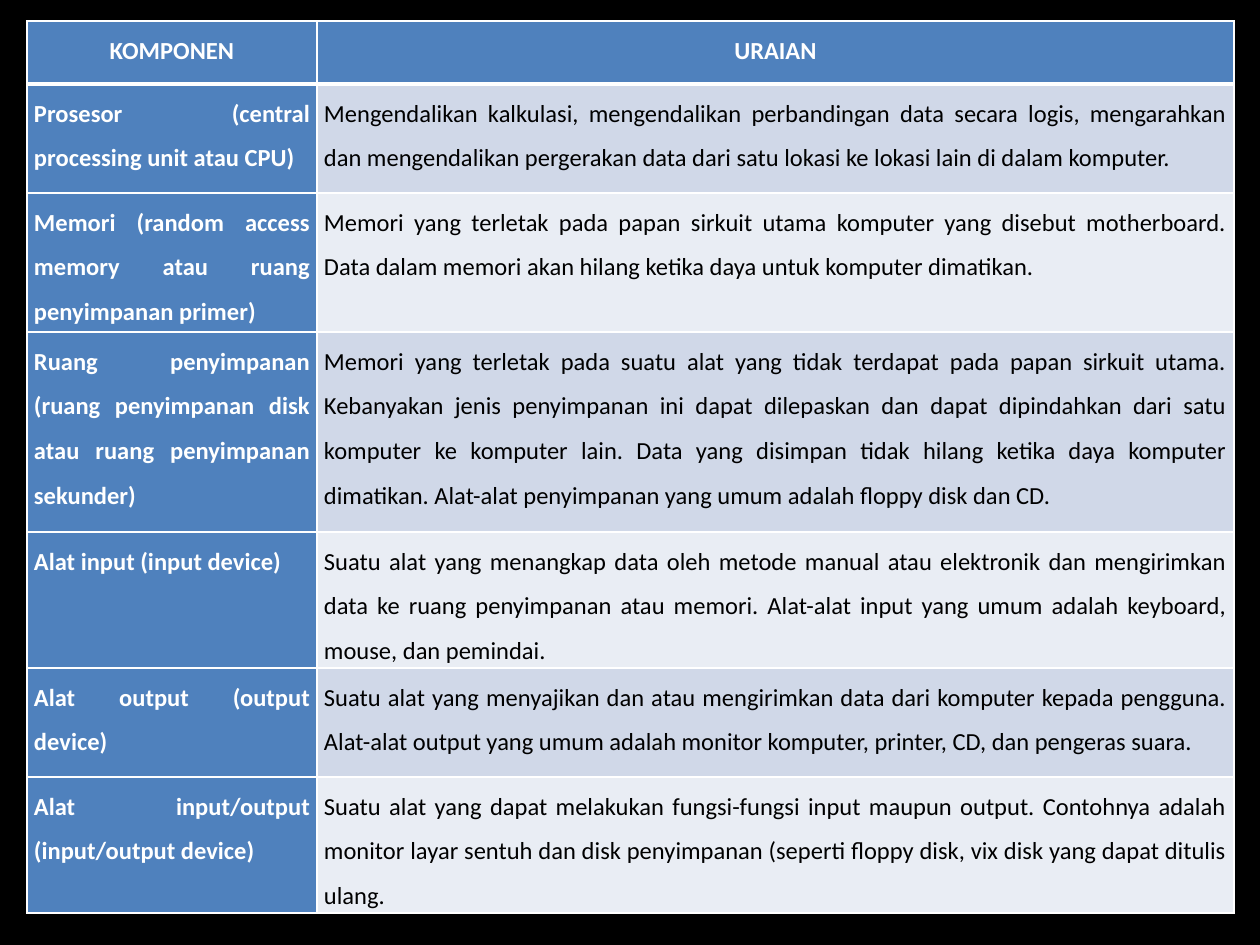
from lxml import etree
from pptx import Presentation
from pptx.dml.color import RGBColor
from pptx.enum.text import PP_ALIGN
from pptx.oxml.ns import qn
from pptx.util import Emu, Pt

CENTER, JUSTIFY = PP_ALIGN.CENTER, PP_ALIGN.JUSTIFY
COLORS = {
    "background": "000000",
    "accent": "4F81BD",
    "odd": "D0D8E8",
    "even": "E9EDF4",
    "light": "FFFFFF",
    "dark": "000000",
}
FONT, FONT_SIZE, LINE_SPACING = "Calibri", 14, 1.5
PAGE_SIZE = (1260, 945)
TABLE_LEFT, TABLE_TOP = 27, 21
COLUMN_WIDTHS = [290, 917]
ROW_HEIGHTS = [63, 109, 139, 200, 136, 109, 136]
SIDE_MARGIN = 7

ROWS = [
    ("KOMPONEN", "URAIAN"),
    ("Prosesor (central processing unit atau CPU)",
     "Mengendalikan kalkulasi, mengendalikan perbandingan data secara logis, "
     "mengarahkan dan mengendalikan pergerakan data dari satu lokasi ke lokasi "
     "lain di dalam komputer."),
    ("Memori (random access memory atau ruang penyimpanan primer)",
     "Memori yang terletak pada papan sirkuit utama komputer yang disebut "
     "motherboard. Data dalam memori akan hilang ketika daya untuk komputer "
     "dimatikan."),
    ("Ruang penyimpanan (ruang penyimpanan disk atau ruang penyimpanan sekunder)",
     "Memori yang terletak pada suatu alat yang tidak terdapat pada papan sirkuit "
     "utama. Kebanyakan jenis penyimpanan ini dapat dilepaskan dan dapat "
     "dipindahkan dari satu komputer ke komputer lain. Data yang disimpan tidak "
     "hilang ketika daya komputer dimatikan. Alat-alat penyimpanan yang umum "
     "adalah floppy disk dan CD."),
    ("Alat input (input device)",
     "Suatu alat yang menangkap data oleh metode manual atau elektronik dan "
     "mengirimkan data ke ruang penyimpanan atau memori. Alat-alat input yang "
     "umum adalah keyboard, mouse, dan pemindai."),
    ("Alat output (output device)",
     "Suatu alat yang menyajikan dan atau mengirimkan data dari komputer kepada "
     "pengguna. Alat-alat output yang umum adalah monitor komputer, printer, CD, "
     "dan pengeras suara."),
    ("Alat input/output (input/output device)",
     "Suatu alat yang dapat melakukan fungsi-fungsi input maupun output. "
     "Contohnya adalah monitor layar sentuh dan disk penyimpanan (seperti floppy "
     "disk, vix disk yang dapat ditulis ulang."),
]


def px(value):
    return Emu(round(value * 914400 / 126))


def color(name):
    return RGBColor.from_string(COLORS[name])


def add_borders(cell, widths):
    properties = cell._tc.get_or_add_tcPr()
    for side, width in widths.items():
        line = etree.SubElement(properties, qn(f"a:ln{side}"), w=str(Pt(width)))
        fill = etree.SubElement(line, qn("a:solidFill"))
        etree.SubElement(fill, qn("a:srgbClr"), val=COLORS["light"])


def fill_cell(cell, text, row, column):
    is_header = row == 0
    is_accent = is_header or column == 0
    add_borders(cell, {"L": 1, "R": 1,
                       "T": 3 if row == 1 else 1,
                       "B": 3 if is_header else 1})
    cell.fill.solid()
    band = "odd" if row % 2 else "even"
    cell.fill.fore_color.rgb = color("accent" if is_accent else band)
    cell.margin_left = cell.margin_right = px(SIDE_MARGIN)
    cell.margin_top = cell.margin_bottom = 0

    para = cell.text_frame.paragraphs[0]
    para.text = text
    para.alignment = CENTER if is_header else JUSTIFY
    para.line_spacing = LINE_SPACING
    font = para.runs[0].font
    font.name, font.size, font.bold = FONT, Pt(FONT_SIZE), is_accent
    font.color.rgb = color("light" if is_accent else "dark")


def main():
    deck = Presentation()
    deck.slide_width, deck.slide_height = map(px, PAGE_SIZE)
    page = deck.slides.add_slide(deck.slide_layouts[6])
    page.background.fill.solid()
    page.background.fill.fore_color.rgb = color("background")

    table = page.shapes.add_table(
        len(ROWS), len(COLUMN_WIDTHS), px(TABLE_LEFT), px(TABLE_TOP),
        px(sum(COLUMN_WIDTHS)), px(sum(ROW_HEIGHTS))).table
    for column, width in zip(table.columns, COLUMN_WIDTHS):
        column.width = px(width)
    for row, height in zip(table.rows, ROW_HEIGHTS):
        row.height = px(height)
    for row, texts in enumerate(ROWS):
        for column, text in enumerate(texts):
            fill_cell(table.cell(row, column), text, row, column)

    deck.save("out.pptx")


if __name__ == "__main__":
    main()
